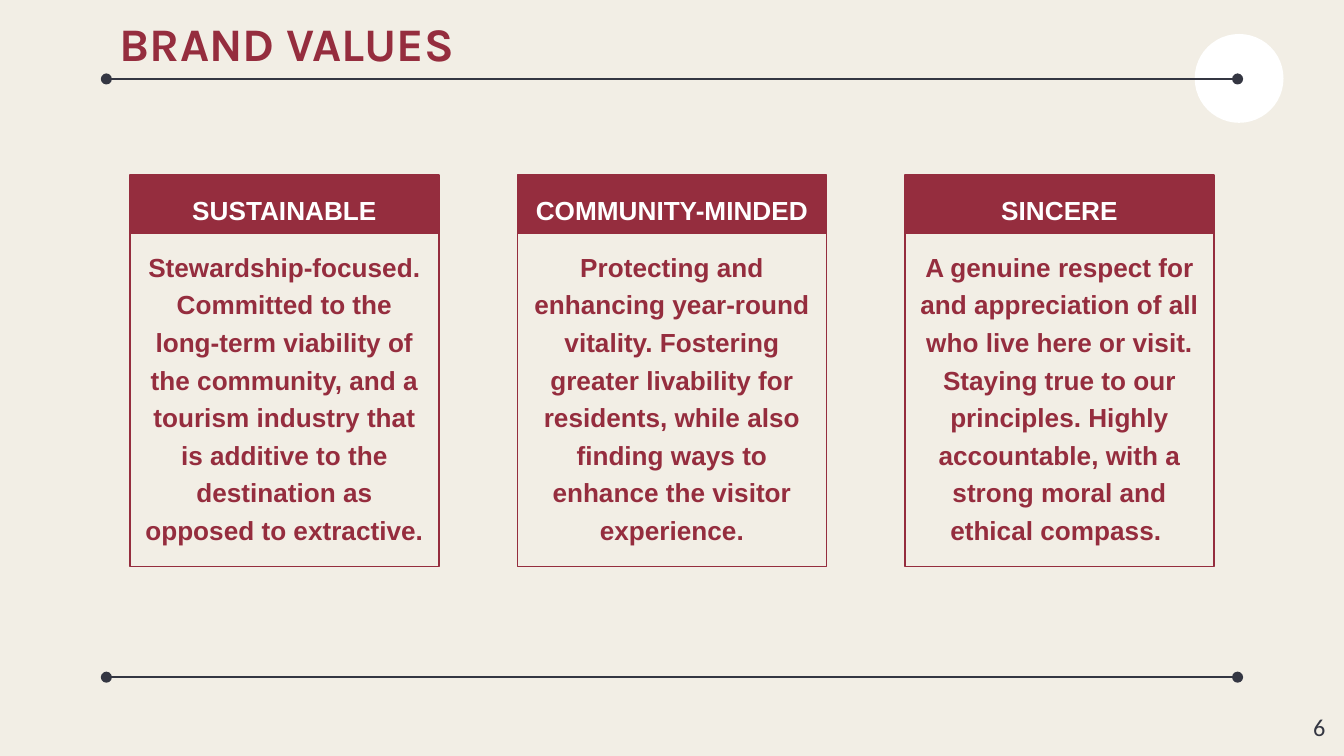
"""Build the brand values slide with three titled cards."""
import dataclasses

import lxml.etree
import pptx
import pptx.dml.color
import pptx.enum.shapes
import pptx.enum.text
import pptx.oxml.ns
import pptx.util

Pt = pptx.util.Pt
Align = pptx.enum.text.PP_ALIGN
Anchor = pptx.enum.text.MSO_ANCHOR
Shape = pptx.enum.shapes.MSO_SHAPE


@dataclasses.dataclass(frozen=True)
class Theme:
    background: str = "F2EEE5"
    accent: str = "952D3E"
    dark: str = "343642"
    white: str = "FFFFFF"
    title_font: str = "Karla"
    body_font: str = "Arial"
    number_font: str = "Calibri"
    title_size: float = 25
    body_size: float = 14
    number_size: float = 13
    line_width: float = 0.75
    line_spacing: float = 1.2
    inset: float = 7.2


def rgb(color):
    return pptx.dml.color.RGBColor.from_string(color)


def write_text(shape, text, *, font, size, color, inset, bold=False,
               align=Align.LEFT, anchor=Anchor.MIDDLE, spacing=1.0):
    frame = shape.text_frame
    frame.word_wrap = True
    frame.auto_size = pptx.enum.text.MSO_AUTO_SIZE.NONE
    frame.vertical_anchor = anchor
    frame.margin_left = frame.margin_right = Pt(inset)
    frame.margin_top = frame.margin_bottom = Pt(inset)
    paragraph = frame.paragraphs[0]
    paragraph.alignment = align
    paragraph.line_spacing = spacing
    run = paragraph.add_run()
    run.text = text
    run.font.name = font
    run.font.size = Pt(size)
    run.font.bold = bold
    run.font.color.rgb = rgb(color)


class SlideBuilder:
    def __init__(self, presentation, theme):
        self.theme = theme
        self.slide = presentation.slides.add_slide(presentation.slide_layouts[5])
        fill = self.slide.background.fill
        fill.solid()
        fill.fore_color.rgb = rgb(theme.background)

    def title(self, text, left, top, width, height):
        shape = self.slide.shapes.title
        shape.left, shape.top = Pt(left), Pt(top)
        shape.width, shape.height = Pt(width), Pt(height)
        write_text(shape, text, font=self.theme.title_font,
                   size=self.theme.title_size, color=self.theme.accent,
                   inset=self.theme.inset, bold=True)

    def shape(self, kind, left, top, width, height, fill=None, line=None):
        shape = self.slide.shapes.add_shape(
            kind, Pt(left), Pt(top), Pt(width), Pt(height))
        shape.shadow.inherit = False
        if fill:
            shape.fill.solid()
            shape.fill.fore_color.rgb = rgb(fill)
        else:
            shape.fill.background()
        if line:
            shape.line.color.rgb = rgb(line)
            shape.line.width = Pt(self.theme.line_width)
        else:
            shape.line.fill.background()
        return shape

    def rule(self, left, right, y):
        connector = self.slide.shapes.add_connector(
            pptx.enum.shapes.MSO_CONNECTOR.STRAIGHT,
            Pt(left), Pt(y), Pt(right), Pt(y))
        connector.line.color.rgb = rgb(self.theme.dark)
        connector.line.width = Pt(self.theme.line_width)
        qn = pptx.oxml.ns.qn
        properties = connector.line._get_or_add_ln()
        for end in ("a:headEnd", "a:tailEnd"):
            lxml.etree.SubElement(properties, qn(end), type="oval",
                                  w="med", len="med")
        lxml.etree.SubElement(connector._element.spPr, qn("a:effectLst"))

    def box(self, text, left, top, width, height, color, fill=None):
        shape = self.shape(Shape.RECTANGLE, left, top, width, height,
                           fill=fill, line=self.theme.accent)
        write_text(shape, text, font=self.theme.body_font,
                   size=self.theme.body_size, color=color,
                   inset=self.theme.inset, bold=True, align=Align.CENTER,
                   anchor=Anchor.TOP, spacing=self.theme.line_spacing)

    def number(self, text, left, top, width, height):
        shape = self.slide.shapes.add_textbox(
            Pt(left), Pt(top), Pt(width), Pt(height))
        write_text(shape, text, font=self.theme.number_font,
                   size=self.theme.number_size, color=self.theme.dark,
                   inset=self.theme.inset, align=Align.RIGHT)


CARDS = [
    ("SUSTAINABLE",
     "Stewardship-focused. Committed to the long-term viability of the "
     "community, and a tourism industry that is additive to the destination "
     "as opposed to extractive."),
    ("COMMUNITY-MINDED",
     "Protecting and enhancing year-round vitality. Fostering greater "
     "livability for residents, while also finding ways to enhance the "
     "visitor experience."),
    ("SINCERE",
     "A genuine respect for and appreciation of all who live here or visit. "
     "Staying true to our principles. Highly accountable, with a strong "
     "moral and ethical compass. "),
]


def main():
    presentation = pptx.Presentation()
    presentation.slide_width, presentation.slide_height = Pt(720), Pt(405)
    theme = Theme()
    builder = SlideBuilder(presentation, theme)

    builder.shape(Shape.OVAL, 640, 18.2, 47.6, 47.6, fill=theme.white)
    for y in (42.3, 362.8):
        builder.rule(57, 663, y)
    builder.title("BRAND VALUES", 57, 0, 607, 45.4)
    builder.number("6", 674, 373.7, 43.2, 31)

    card_width, card_pitch, card_left = 165.6, 207.6, 69.6
    for index, (heading, body) in enumerate(CARDS):
        left = card_left + index * card_pitch
        builder.box(heading, left, 93.8, card_width, 31,
                    color=theme.white, fill=theme.accent)
        builder.box(body, left, 124, card_width, 179.5, color=theme.accent)

    presentation.save("out.pptx")


if __name__ == "__main__":
    main()
